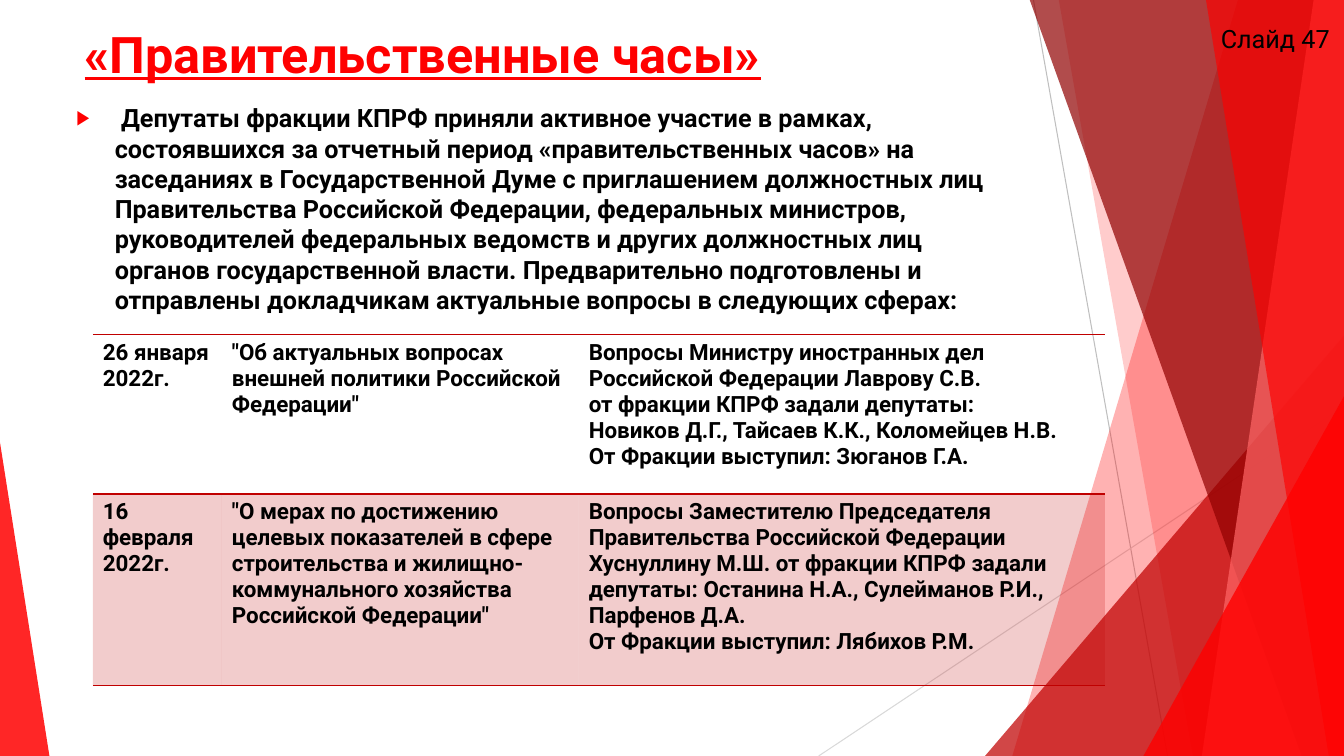
import lxml.etree
import pptx
import pptx.dml.color
import pptx.enum.shapes
import pptx.enum.text
import pptx.oxml.ns
import pptx.util

PX = 9144
TITLE = {"size": pptx.util.Pt(36), "bold": True, "underline": True}
BODY = {"size": pptx.util.Pt(18), "bold": True}
CELL = {"size": pptx.util.Pt(16), "bold": True}
PLAIN = {"size": pptx.util.Pt(18)}

RAYS = [
    ("BFBFBF", (1025, 0), (1158, 750)),
    ("D9D9D9", (1333, 403), (812, 750)),
]
BACK_PANELS = [("FF0000", 30, 1228, 1004), ("FF0000", 20, 1050, 1183)]
FRONT_PANELS = [
    ("900000", 70, 1021, 1291),
    ("FF6666", 70, 1303, 1192),
    ("FF0000", 65, 1196, 1318),
]

INTRO = (
    "\N{NO-BREAK SPACE}Депутаты фракции КПРФ приняли активное участие в рамках, "
    "состоявшихся за отчетный период «правительственных часов» на заседаниях "
    "в Государственной Думе с приглашением должностных лиц Правительства "
    "Российской Федерации, федеральных министров, руководителей федеральных "
    "ведомств и других должностных лиц органов государственной власти. "
    "Предварительно подготовлены и отправлены докладчикам актуальные вопросы "
    "в следующих сферах:"
)
HEARINGS = [
    [
        "26 января 2022г.",
        '"Об актуальных вопросах внешней политики Российской Федерации"',
        "Вопросы Министру иностранных дел Российской Федерации Лаврову С.В.\v"
        "от фракции КПРФ задали депутаты:\n"
        "Новиков Д.Г., Тайсаев К.К., Коломейцев Н.В.\n"
        "От Фракции выступил: Зюганов Г.А.",
    ],
    [
        "16 февраля 2022г.",
        '"О мерах по достижению целевых показателей в сфере строительства '
        'и жилищно-коммунального хозяйства Российской Федерации"',
        "Вопросы Заместителю Председателя Правительства Российской Федерации "
        "Хуснуллину М.Ш. от фракции КПРФ задали депутаты: Останина Н.А., "
        "Сулейманов Р.И., Парфенов Д.А.\n"
        "От Фракции выступил: Лябихов Р.М.",
    ],
]


def color(value):
    return pptx.dml.color.RGBColor.from_string(value)


def add_xml(parent, tag, **attributes):
    element = lxml.etree.SubElement(parent, pptx.oxml.ns.qn(tag))
    for name, value in attributes.items():
        element.set(name, str(value))
    return element


def fill_with(fill, properties, value, opacity):
    fill.solid()
    fill.fore_color.rgb = color(value)
    solid = properties.find(pptx.oxml.ns.qn("a:solidFill"))
    add_xml(solid[0], "a:alpha", val=opacity * 1000)


def finish_shape(shape, value, opacity):
    shape.shadow.inherit = False
    fill_with(shape.fill, shape.element.spPr, value, opacity)
    shape.line.fill.background()


def add_ray(slide, value, start, end):
    ray = slide.shapes.add_connector(
        pptx.enum.shapes.MSO_CONNECTOR.STRAIGHT,
        *(length * PX for length in start + end),
    )
    ray.line.color.rgb = color(value)
    ray.line.width = pptx.util.Pt(0.75)
    add_xml(ray.element.spPr, "a:effectLst")


def add_panel(slide, value, opacity, top_left, bottom_left):
    builder = slide.shapes.build_freeform(top_left, -1, scale=PX)
    builder.add_line_segments([(1333, -1), (1333, 750), (bottom_left, 750)])
    finish_shape(builder.convert_to_shape(), value, opacity)


def add_triangle(slide, value, opacity, box, peak):
    triangle = slide.shapes.add_shape(
        pptx.enum.shapes.MSO_SHAPE.ISOSCELES_TRIANGLE,
        *(length * PX for length in box),
    )
    triangle.adjustments[0] = peak
    finish_shape(triangle, value, opacity)


def format_text(text_frame, text, font_values, value):
    text_frame.text = text
    for paragraph in text_frame.paragraphs:
        for run in paragraph.runs:
            run.font.name = "Roboto"
            run.font.color.rgb = color(value)
            for name, setting in font_values.items():
                setattr(run.font, name, setting)


def add_text(slide, box, text, font_values, value="000000", wrap=True):
    shape = slide.shapes.add_textbox(*(length * PX for length in box))
    shape.text_frame.word_wrap = wrap
    format_text(shape.text_frame, text, font_values, value)
    return shape.text_frame.paragraphs[0]


def add_bullet(paragraph, value, indent):
    properties = paragraph._p.get_or_add_pPr()
    properties.set("marL", str(indent * PX))
    properties.set("indent", str(-indent * PX))
    add_xml(add_xml(properties, "a:buClr"), "a:srgbClr", val=value)
    add_xml(properties, "a:buSzPct", val=80000)
    add_xml(properties, "a:buFont", typeface="Arial")
    add_xml(properties, "a:buChar", char="▶")


def set_borders(cell, value):
    properties = cell._tc.get_or_add_tcPr()
    for side in ("L", "R"):
        add_xml(add_xml(properties, "a:ln" + side, w=0), "a:noFill")
    for side in ("T", "B"):
        border = add_xml(properties, "a:ln" + side, w=pptx.util.Pt(1))
        add_xml(add_xml(border, "a:solidFill"), "a:srgbClr", val=value)


def add_hearings(slide, left, top, widths, heights):
    box = (left, top, sum(widths), sum(heights))
    table = slide.shapes.add_table(
        len(heights), len(widths), *(length * PX for length in box)
    ).table
    table.first_row = False
    table.horz_banding = False
    for column, width in zip(table.columns, widths):
        column.width = width * PX
    for row, height, texts in zip(table.rows, heights, HEARINGS):
        row.height = height * PX
        for cell, text in zip(row.cells, texts):
            format_text(cell.text_frame, text, CELL, "000000")
            set_borders(cell, "C00000")
            if texts is HEARINGS[0]:
                cell.fill.background()
            else:
                fill_with(cell.fill, cell._tc.tcPr, "C00000", 20)


def add_decor(slide):
    for ray in RAYS:
        add_ray(slide, *ray)
    for panel in BACK_PANELS:
        add_panel(slide, *panel)
    add_triangle(slide, "C00000", 72, (977, 333, 356, 417), 1)
    for panel in FRONT_PANELS:
        add_panel(slide, *panel)
    add_triangle(slide, "FF0000", 80, (1134, 393, 199, 357), 1)
    add_triangle(slide, "FF0000", 85, (0, 439, 49, 311), 0)


def main():
    presentation = pptx.Presentation()
    presentation.slide_width = 1333 * PX
    presentation.slide_height = 750 * PX
    slide = presentation.slides.add_slide(presentation.slide_layouts[6])
    add_decor(slide)
    add_text(slide, (74, 18, 940, 70), "«Правительственные часы»", TITLE, "FF0000")
    intro = add_text(slide, (66, 97, 948, 225), INTRO, BODY)
    add_bullet(intro, "FF0000", 38)
    add_hearings(slide, 92, 332, (128, 354, 522), (158, 190))
    add_text(slide, (1201, 18, 133, 40), "Слайд 47", PLAIN, wrap=False)
    presentation.save("out.pptx")


if __name__ == "__main__":
    main()
